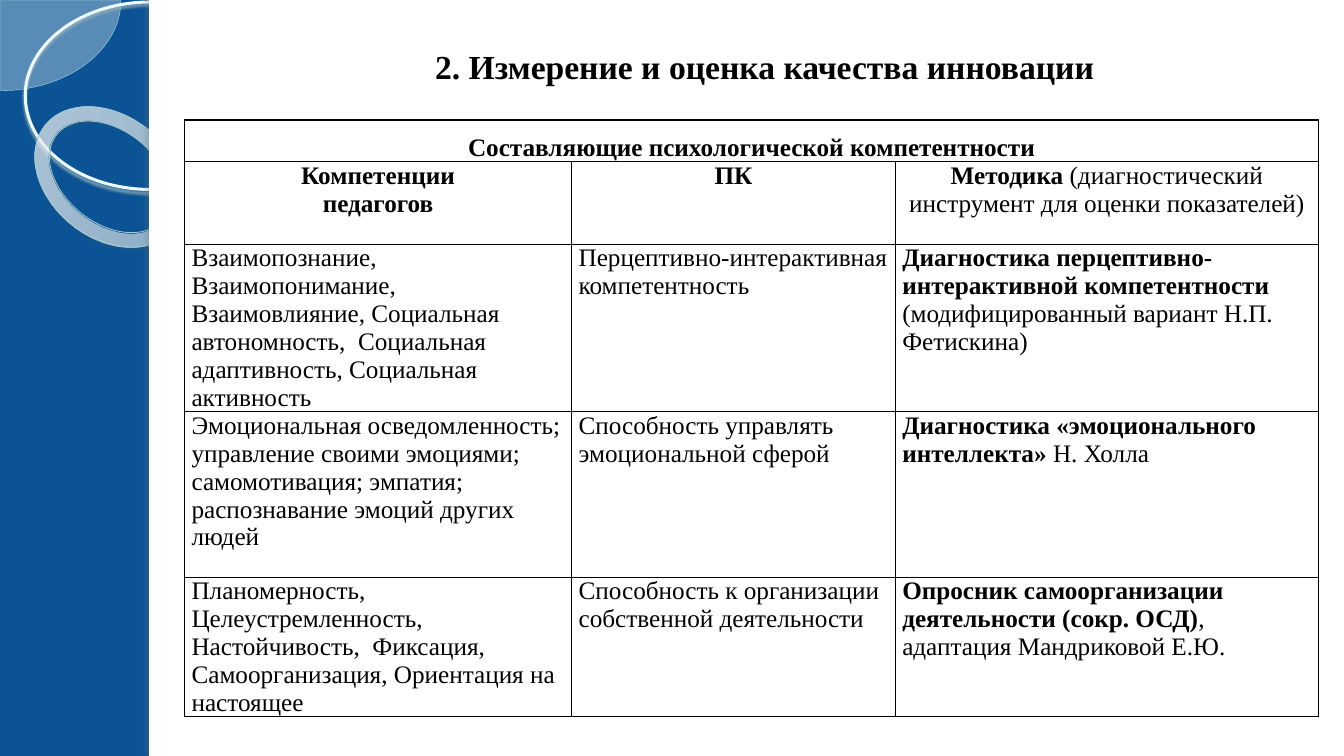
from dataclasses import dataclass
from typing import Optional

from lxml import etree
from pptx import Presentation
from pptx import util as u
from pptx.dml.color import RGBColor
from pptx.enum import shapes, text
from pptx.oxml import ns

SLIDE_W, SLIDE_H = u.Inches(13.33), u.Inches(7.5)


@dataclass(frozen=True)
class Theme:
    font: str = "Times New Roman"
    title_size: float = 24
    table_size: float = 18
    border_width: float = 1
    navy: str = "0B5394"
    paper: str = "FFFFFF"
    ink: str = "000000"
    wedge: str = "F8FEFF"
    wedge_edge: str = "AFDBE2"
    ring: str = "EDFCFF"
    donut_edge: str = "A1CFD6"
    # Position, colour, opacity, all but the colour in percent
    donut_stops: tuple = ((0, "F9FEFF", 70), (70, "FDFFFF", 55), (100, "9EF2FF", 60))


THEME = Theme()


@dataclass(frozen=True)
class Box:
    """Place and size in percent of the slide's width and height."""
    left: float
    top: float
    width: float
    height: float

    def emu(self) -> tuple[int, int, int, int]:
        return (across(self.left), down(self.top), across(self.width), down(self.height))


@dataclass(frozen=True)
class Shadow:
    color: str
    opacity: float
    blur: float
    distance: float
    angle: float


@dataclass(frozen=True)
class Ornament:
    kind: shapes.MSO_SHAPE
    box: Box
    fill: Optional[str] = None
    opacity: float = 100
    stops: tuple = ()
    line: Optional[str] = None
    line_width: float = 0
    adjustments: tuple = ()
    rotation: float = 0
    shadow: Optional[Shadow] = None


@dataclass(frozen=True)
class Line:
    """One paragraph: a bold start, then a regular end."""
    strong: str = ""
    plain: str = ""


def across(percent: float) -> int:
    return round(SLIDE_W * percent / 100)


def down(percent: float) -> int:
    return round(SLIDE_H * percent / 100)


def child(parent, tag: str, **attributes):
    return etree.SubElement(parent, ns.qn(tag), {k: str(v) for k, v in attributes.items()})


def add_color(parent, color: str, opacity: float) -> None:
    child(child(parent, "a:srgbClr", val=color), "a:alpha", val=round(opacity * 1000))


def add_gradient(properties, stops: tuple) -> None:
    gradient = etree.Element(ns.qn("a:gradFill"), rotWithShape="1")
    stop_list = child(gradient, "a:gsLst")
    for position, color, opacity in stops:
        add_color(child(stop_list, "a:gs", pos=position * 1000), color, opacity)
    circle = child(gradient, "a:path", path="circle")
    child(circle, "a:fillToRect", l=-408000, t=-50000, r=508000, b=150000)
    properties.replace(properties.find(ns.qn("a:noFill")), gradient)


def draw_ornament(slide, item: Ornament) -> None:
    shape = slide.shapes.add_shape(item.kind, *item.box.emu())
    properties = shape._element.spPr
    shape.rotation = item.rotation
    for index, value in enumerate(item.adjustments):
        shape.adjustments[index] = value
    if item.fill:
        shape.fill.solid()
        shape.fill.fore_color.rgb = RGBColor.from_string(item.fill)
        color = properties.find(ns.qn("a:solidFill"))[0]
        child(color, "a:alpha", val=item.opacity * 1000)
    else:
        shape.fill.background()
    if item.stops:
        add_gradient(properties, item.stops)
    if item.line:
        shape.line.color.rgb = RGBColor.from_string(item.line)
        shape.line.width = u.Pt(item.line_width)
    else:
        shape.line.fill.background()
    shape.shadow.inherit = False
    if item.shadow:
        outer = child(properties.find(ns.qn("a:effectLst")), "a:outerShdw",
                      blurRad=u.Pt(item.shadow.blur), dist=u.Pt(item.shadow.distance),
                      dir=item.shadow.angle * 60000, rotWithShape=0)
        add_color(outer, item.shadow.color, item.shadow.opacity)


def write_paragraph(paragraph, line: Line, size: float, centred: bool, spacing: float = 1) -> None:
    paragraph.text = line.strong or line.plain
    if line.strong and line.plain:
        paragraph.add_run().text = line.plain
    paragraph.alignment = text.PP_ALIGN.CENTER if centred else text.PP_ALIGN.LEFT
    paragraph.line_spacing = spacing
    for index, run in enumerate(paragraph.runs):
        run.font.name, run.font.size = THEME.font, u.Pt(size)
        run.font.bold = index == 0 and bool(line.strong)
        run.font.color.rgb = RGBColor.from_string(THEME.ink)


def style_cell(cell) -> None:
    cell.margin_left = cell.margin_right = u.Inches(0.07)
    cell.margin_top = cell.margin_bottom = 0
    cell.fill.background()
    properties = cell._tc.get_or_add_tcPr()
    for index, side in enumerate(("a:lnL", "a:lnR", "a:lnT", "a:lnB")):
        border = etree.Element(ns.qn(side), w=str(u.Pt(THEME.border_width)))
        add_color(child(border, "a:solidFill"), THEME.ink, 100)
        properties.insert(index, border)


def draw_table(slide, box: Box, columns: tuple, rows: tuple, content: list) -> None:
    table = slide.shapes.add_table(len(rows), len(columns), *box.emu()).table
    table.first_row = table.horz_banding = False
    for column, width in zip(table.columns, columns):
        column.width = across(width)
    for row, height in zip(table.rows, rows):
        row.height = down(height)
    for cell in table.iter_cells():
        style_cell(cell)
    table.cell(0, 0).merge(table.cell(0, len(columns) - 1))
    for r, entries in enumerate(content):
        for c, lines in enumerate(entries):
            frame = table.cell(r, c).text_frame
            for index, line in enumerate(lines):
                paragraph = frame.add_paragraph() if index else frame.paragraphs[0]
                write_paragraph(paragraph, line, THEME.table_size, r < 2, 1 if r else 1.5)


SIDEBAR = [
    Ornament(shapes.MSO_SHAPE.PIE, Box(-8.93, -11.87, 17.93, 23.87), THEME.wedge, 33,
             line=THEME.wedge_edge, line_width=0.25, adjustments=(0, 54)),
    Ornament(shapes.MSO_SHAPE.OVAL, Box(1.88, 0.27, 18.6, 24.8), line=THEME.ring,
             line_width=2.15, shadow=Shadow("9CB9BE", 85, 2, 2, 90)),
    Ornament(shapes.MSO_SHAPE.DONUT, Box(2.03, 15.33, 12.3, 16.13), stops=THEME.donut_stops,
             line=THEME.donut_edge, line_width=0.58, adjustments=(0.12,), rotation=38.6,
             shadow=Shadow("4B5E61", 35, 1, 1.2, 75)),
    Ornament(shapes.MSO_SHAPE.RECTANGLE, Box(11.1, 0, 88.9, 100), THEME.paper),
    Ornament(shapes.MSO_SHAPE.RECTANGLE, Box(11.1, 0, 0.83, 100), THEME.paper,
             shadow=Shadow("6C7A7C", 25, 3, 3, 180)),
]

COMPETENCES = [
    [[Line("Составляющие психологической компетентности")]],
    [[Line("Компетенции"), Line("педагогов")], [Line("ПК")],
     [Line("Методика ", "(диагностический инструмент для оценки показателей)")]],
    [[Line(plain="Взаимопознание, Взаимопонимание, Взаимовлияние, Социальная автономность,  "
                 "Социальная адаптивность, Социальная активность")],
     [Line(plain="Перцептивно-интерактивная компетентность")],
     [Line("Диагностика перцептивно-интерактивной компетентности",
           " (модифицированный вариант Н.П. Фетискина)")]],
    [[Line(plain="Эмоциональная осведомленность; управление своими эмоциями; самомотивация; "
                 "эмпатия; распознавание эмоций других людей")],
     [Line(plain="Способность управлять эмоциональной сферой")],
     [Line("Диагностика «эмоционального интеллекта» ", "Н. Холла")]],
    [[Line(plain="Планомерность,"),
      Line(plain="Целеустремленность, Настойчивость,  Фиксация, Самоорганизация, "
                 "Ориентация на настоящее")],
     [Line(plain="Способность к организации собственной деятельности")],
     [Line("Опросник самоорганизации деятельности (сокр. ОСД)", ", адаптация Мандриковой Е.Ю.")]],
]


def main() -> None:
    deck = Presentation()
    deck.slide_width, deck.slide_height = SLIDE_W, SLIDE_H
    slide = deck.slides.add_slide(deck.slide_layouts[6])
    # Background and sidebar
    slide.background.fill.solid()
    slide.background.fill.fore_color.rgb = RGBColor.from_string(THEME.navy)
    for ornament in SIDEBAR:
        draw_ornament(slide, ornament)
    # Table of competences
    draw_table(slide, Box(13.73, 15.87, 84.38, 78.4), (28.8, 24.08, 31.5),
               (5.47, 10.93, 21.87, 21.87, 18.27), COMPETENCES)
    # Title
    title = slide.shapes.add_textbox(*Box(31.35, 2.8, 51.08, 9.47).emu()).text_frame
    title.word_wrap = False
    write_paragraph(title.paragraphs[0], Line("2. Измерение и оценка качества инновации"),
                    THEME.title_size, True, 1.5)
    deck.save("out.pptx")


if __name__ == "__main__":
    main()
